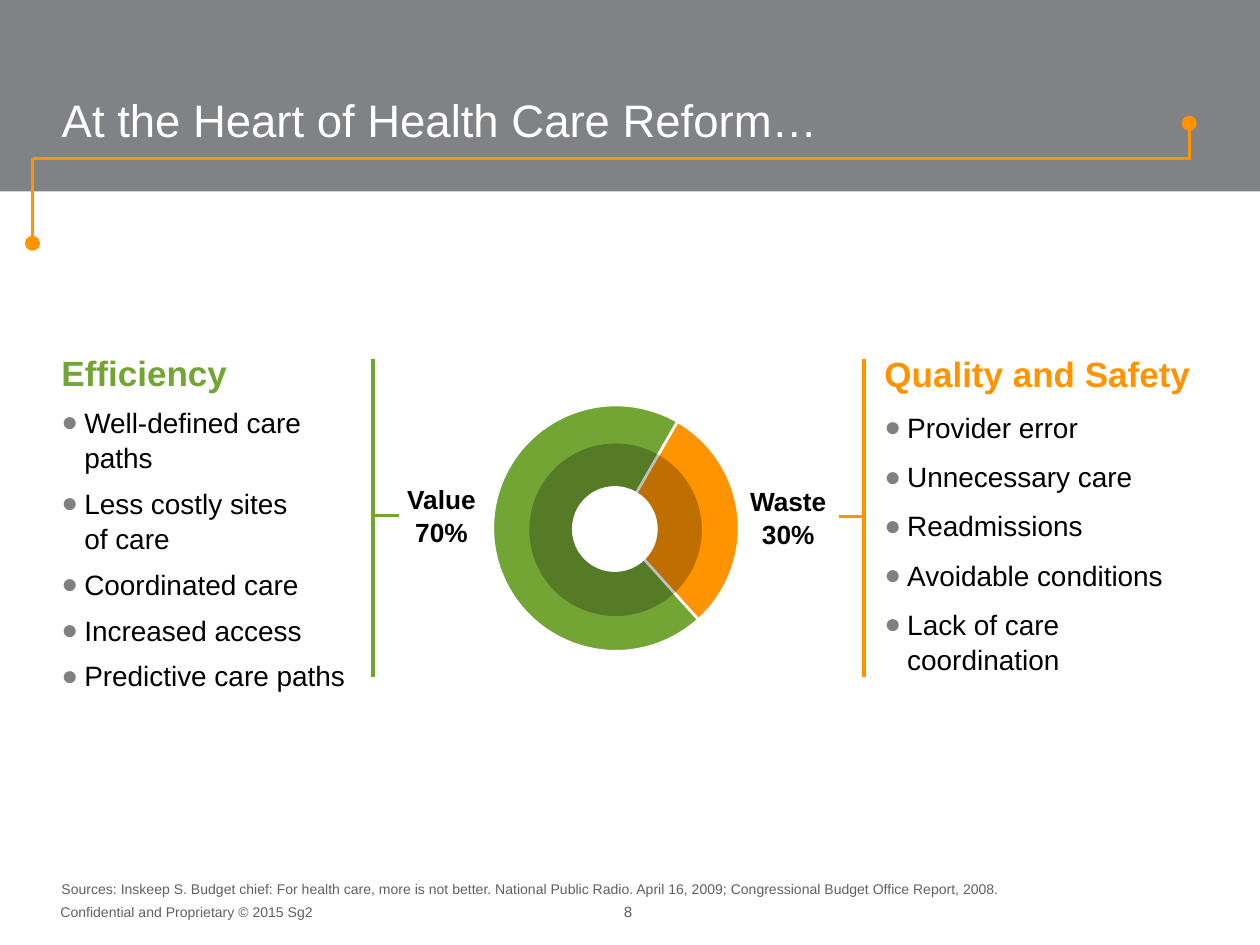
from copy import deepcopy

from lxml.etree import SubElement
from pptx import Presentation
from pptx.chart.data import CategoryChartData
from pptx.dml.color import RGBColor
from pptx.enum.chart import XL_CHART_TYPE as ChartType
from pptx.enum.shapes import MSO_CONNECTOR as Connector, MSO_SHAPE as Shape
from pptx.enum.text import MSO_ANCHOR as Anchor, MSO_AUTO_SIZE as AutoSize, PP_ALIGN as Align
from pptx.oxml.ns import qn
from pptx.util import Cm, Pt

GREEN, ORANGE, WHITE, BLACK = "73A534", "FF9400", "FFFFFF", "000000"
BANNER_GRAY, NOTE_GRAY, BULLET_GRAY = "818285", "606060", "808080"


def paint(color_format, color):
    color_format.rgb = RGBColor.from_string(color)


def write(para, text, size=16, color=BLACK, font="Arial", bold=False,
          align=Align.LEFT, before=0, spacing=1, bullet=False):
    para.text = text
    para.alignment = align
    para.space_before = Pt(before)
    para.line_spacing = spacing
    if bullet:
        props = para._p.get_or_add_pPr()
        props.set("marL", str(Cm(0.46)))
        props.set("indent", str(-Cm(0.46)))
        SubElement(SubElement(props, qn("a:buClr")), qn("a:srgbClr"), val=BULLET_GRAY)
        SubElement(props, qn("a:buFont"), typeface="Arial")
        SubElement(props, qn("a:buChar"), char="●")
    for span in para.runs:
        span.font.name = font
        span.font.size = Pt(size)
        span.font.bold = bold
        paint(span.font.color, color)
    for line_break in para._p.findall(qn("a:br")):
        line_break.insert(0, deepcopy(para.runs[0]._r.rPr))


deck = Presentation()
deck.slide_width, deck.slide_height = Cm(25.4), Cm(19.05)
page = deck.slides.add_slide(deck.slide_layouts[5])
shapes = page.shapes

title = shapes.title
title.left, title.top, title.width, title.height = Cm(0.99), Cm(0.41), Cm(23.11), Cm(2.67)
title.text_frame.vertical_anchor = Anchor.BOTTOM
title.text_frame.auto_size = AutoSize.NONE
title.text_frame.word_wrap = True
write(title.text_frame.paragraphs[0], "At the Heart of Health Care Reform…", size=26, color=WHITE)

banner = shapes.add_shape(Shape.RECTANGLE, 0, 0, Cm(25.4), Cm(3.86))
banner.shadow.inherit = False
banner.fill.solid()
paint(banner.fill.fore_color, BANNER_GRAY)
banner.line.fill.background()
shapes._spTree.insert(2, banner._element)

chart_data = CategoryChartData()
chart_data.categories = ["1", "2"]
chart_data.add_series("Series 1", [30, 70])
chart = shapes.add_chart(ChartType.PIE, Cm(6.81), Cm(7.04), Cm(10.59), Cm(6.86), chart_data).chart
chart.has_legend = False
chart.has_title = False
chart.font.name = "Arial"
chart.font.size = Pt(18)
paint(chart.font.color, BLACK)
pie = chart.plots[0]
pie.vary_by_categories = False
for index, color in enumerate([ORANGE, GREEN]):
    slice_format = pie.series[0].points[index].format
    slice_format.fill.solid()
    paint(slice_format.fill.fore_color, color)
    paint(slice_format.line.color, WHITE)
    slice_format.line.width = Pt(1.5)

pie_element = chart._chartSpace.find(".//" + qn("c:pieChart"))
start_angle = pie_element.find(qn("c:firstSliceAng"))
if start_angle is None:
    start_angle = SubElement(pie_element, qn("c:firstSliceAng"))
start_angle.set("val", "30")
plot_area = pie_element.getparent()
layout = plot_area.find(qn("c:layout"))
if layout is None:
    layout = SubElement(plot_area, qn("c:layout"))
    plot_area.insert(0, layout)
manual = SubElement(layout, qn("c:manualLayout"))
for tag, value in [("layoutTarget", "inner"), ("xMode", "edge"), ("yMode", "edge"),
                   ("x", "0.295"), ("y", "0.164"), ("w", "0.469"), ("h", "0.724")]:
    SubElement(manual, qn("c:" + tag), val=value)

for left, top, size, color, opacity in [
    (23.85, 2.36, 0.25, ORANGE, 100),
    (0.53, 4.78, 0.25, ORANGE, 100),
    (10.67, 8.94, 3.48, BLACK, 25),
    (11.53, 9.8, 1.73, WHITE, 100),
]:
    disc = shapes.add_shape(Shape.OVAL, Cm(left), Cm(top), Cm(size), Cm(size))
    disc.shadow.inherit = False
    disc.fill.solid()
    paint(disc.fill.fore_color, color)
    if color == ORANGE:
        paint(disc.line.color, color)
        disc.line.width = Pt(1.5)
    else:
        disc.line.fill.background()
    if opacity < 100:
        SubElement(disc._element.spPr.find(".//" + qn("a:srgbClr")), qn("a:alpha"),
                   val=str(opacity * 1000))

for x1, y1, x2, y2, color, width in [
    (23.98, 3.23, 23.98, 2.44, ORANGE, 1.5),
    (0.66, 3.2, 24, 3.2, ORANGE, 1.5),
    (0.66, 3.18, 0.66, 4.98, ORANGE, 1.5),
    (7.52, 7.24, 7.52, 13.64, GREEN, 2.25),
    (7.52, 10.39, 8.05, 10.39, GREEN, 1.5),
    (17.42, 7.24, 17.42, 13.64, ORANGE, 2.25),
    (16.92, 10.41, 17.4, 10.41, ORANGE, 1.5),
]:
    line = shapes.add_connector(Connector.STRAIGHT, Cm(x1), Cm(y1), Cm(x2), Cm(y2))
    paint(line.line.color, color)
    line.line.width = Pt(width)
    SubElement(line._element.spPr, qn("a:effectLst"))

for heading, color, left, top, width, height, before, items in [
    ("Efficiency", GREEN, 0.99, 6.96, 6.53, 6.96, 6,
     ["Well-defined care paths", "Less costly sites \nof care", "Coordinated care",
      "Increased access", "Predictive care paths"]),
    ("Quality and Safety", ORANGE, 17.58, 6.99, 7.06, 6.93, 8,
     ["Provider error", "Unnecessary care", "Readmissions", "Avoidable conditions",
      "Lack of care coordination"]),
]:
    frame = shapes.add_textbox(Cm(left), Cm(top), Cm(width), Cm(height)).text_frame
    frame.word_wrap = True
    write(frame.paragraphs[0], heading, size=20, color=color, bold=True)
    for item in items:
        write(frame.add_paragraph(), item, before=before, spacing=1.05, bullet=True)

for label, left, top in [("Value\n70%", 7.87, 9.6), ("Waste\n30%", 14.86, 9.65)]:
    frame = shapes.add_textbox(Cm(left), Cm(top), Cm(2.06), Cm(1.55)).text_frame
    frame.word_wrap = True
    frame.margin_left = frame.margin_right = 0
    frame.vertical_anchor = Anchor.MIDDLE
    write(frame.paragraphs[0], label, size=15, bold=True, align=Align.CENTER, spacing=1.05)

sources = ("Sources: Inskeep S. Budget chief: For health care, more is not better. "
           "National Public Radio. April 16, 2009; Congressional Budget Office Report, 2008.")
for text, left, top, width, height, font, align in [
    (sources, 0.99, 17.63, 21.23, 0.61, "Arial", Align.LEFT),
    ("Confidential and Proprietary © 2015 Sg2", 0.97, 18.08, 10.72, 0.61, "Arial", Align.LEFT),
    ("8", 12.17, 18.08, 0.99, 0.61, "DejaVu Sans", Align.CENTER),
]:
    frame = shapes.add_textbox(Cm(left), Cm(top), Cm(width), Cm(height)).text_frame
    frame.word_wrap = True
    write(frame.paragraphs[0], text, size=8, color=NOTE_GRAY, font=font, align=align)

deck.save("out.pptx")
